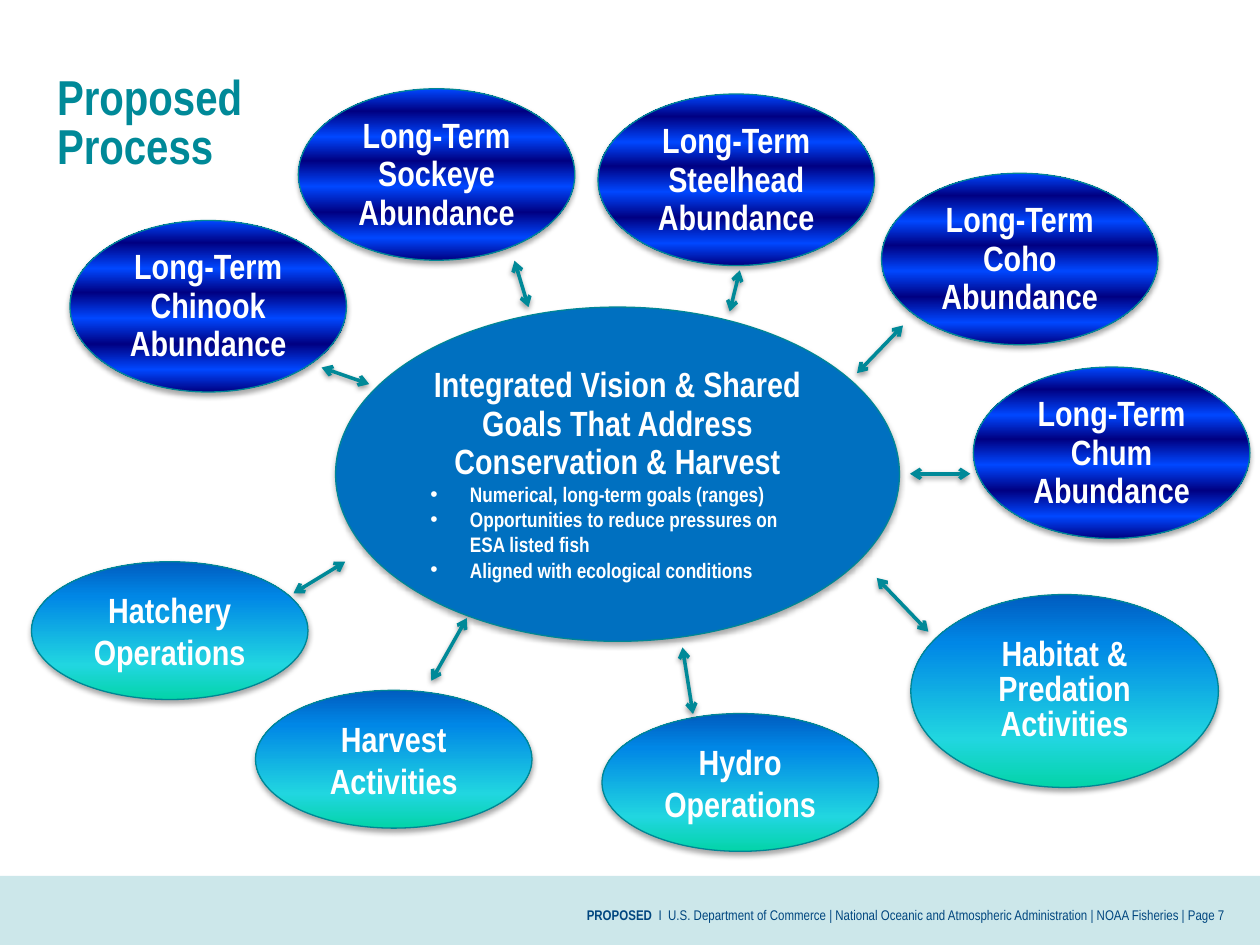
from lxml.etree import SubElement
from pptx import Presentation
from pptx.dml.color import RGBColor
from pptx.enum.shapes import MSO_CONNECTOR, MSO_SHAPE
from pptx.enum.text import MSO_ANCHOR, PP_ALIGN
from pptx.oxml.ns import qn
from pptx.util import Pt

COLORS = {
    "white": "FFFFFF", "band": "CCE7EA", "footer": "00467F", "teal": "008998",
    "outline": "008695", "vision": "0070C0", "shadow": "000000",
    "navy": "000082", "royal": "0047FF",
    "green": "03D4A8", "aqua": "21D6E0", "sky": "0087E6", "deep": "005CBF",
}
STOCK_GRADIENT = list(zip((0, 13, 28, 43, 58, 72, 87, 100), ("navy", "royal") * 4))
ACTIVITY_GRADIENT = [(0, "green"), (25, "aqua"), (75, "sky"), (100, "deep")]

STOCKS = [
    ("Chinook", 40, 126), ("Sockeye", 170.5, 50.75), ("Steelhead", 341.75, 53.75),
    ("Coho", 503.75, 99), ("Chum", 556.25, 209.75),
]
ACTIVITIES = [
    ("Hydro Operations", (344, 407.75, 158, 78.75), None, 7.2, 3.6),
    ("Harvest Activities", (146, 394.5, 158, 78.75), None, 7.2, 3.6),
    ("Hatchery Operations", (18, 321, 158, 78.75), None, 3.6, 3.6),
    ("Habitat & Predation Activities", (520.5, 339.75, 175.75, 110.25), 20, 7.2, 3.6),
]
VISION_POINTS = [
    "Numerical, long-term goals (ranges)",
    "Opportunities to reduce pressures on ESA listed fish",
    "Aligned with ecological conditions",
]
ARROWS = [
    (501, 330.25, 530.5, 361), (390, 370, 396, 408), (266.75, 353.25, 246.5, 389),
    (197.25, 321, 167.75, 339), (294, 149, 302, 175.5), (183.75, 210, 211, 219.5),
    (489.75, 213.25, 516, 186), (422.75, 154.5, 417, 178), (520, 270.75, 554.5, 270.75),
]


def rgb(name):
    return RGBColor.from_string(COLORS[name])


def add_shadow(properties, alpha, blur, distance):
    effects = properties.find(qn("a:effectLst"))
    if effects is None:
        effects = SubElement(properties, qn("a:effectLst"))
    shadow = SubElement(effects, qn("a:outerShdw"), blurRad=str(Pt(blur)),
                        dist=str(Pt(distance)), dir="5400000", rotWithShape="0")
    color = SubElement(shadow, qn("a:srgbClr"), val=COLORS["shadow"])
    SubElement(color, qn("a:alpha"), val=str(alpha * 1000))


def fill_gradient(shape, stops):
    shape.fill.gradient()
    shape.fill.gradient_angle = 90
    stop_list = shape.element.spPr.find(qn("a:gradFill")).find(qn("a:gsLst"))
    for stop in list(stop_list):
        stop_list.remove(stop)
    for position, name in stops:
        stop = SubElement(stop_list, qn("a:gs"), pos=str(position * 1000))
        SubElement(stop, qn("a:srgbClr"), val=COLORS[name])


def write_text(paragraph, text, size=20, color="white", bold=True,
               align=PP_ALIGN.CENTER, spacing=None, bullet=False):
    paragraph.alignment = align
    if spacing:
        paragraph.line_spacing = Pt(spacing)
    if bullet:
        properties = paragraph._p.get_or_add_pPr()
        properties.set("marL", str(Pt(22.5)))
        properties.set("indent", str(-Pt(22.5)))
        SubElement(properties, qn("a:buFont"), typeface="Arial")
        SubElement(properties, qn("a:buChar"), char="•")
    run = paragraph.add_run()
    run.text = text
    run.font.name = "Arial Narrow"
    run.font.size = Pt(size)
    run.font.bold = bold
    run.font.color.rgb = rgb(color)


def add_ellipse(slide, box, fill, side_inset=7.2, top_inset=3.6):
    shape = slide.shapes.add_shape(MSO_SHAPE.OVAL, *map(Pt, box))
    shape.shadow.inherit = False
    if isinstance(fill, str):
        shape.fill.solid()
        shape.fill.fore_color.rgb = rgb(fill)
    else:
        fill_gradient(shape, fill)
    shape.line.color.rgb = rgb("outline")
    shape.line.width = Pt(0.75)
    add_shadow(shape.element.spPr, 35, 3.1, 1.8)
    frame = shape.text_frame
    frame.word_wrap = True
    frame.vertical_anchor = MSO_ANCHOR.MIDDLE
    frame.margin_left = frame.margin_right = Pt(side_inset)
    frame.margin_top = frame.margin_bottom = Pt(top_inset)
    return frame


def add_arrow(slide, points):
    connector = slide.shapes.add_connector(MSO_CONNECTOR.STRAIGHT, *map(Pt, points))
    connector.line.color.rgb = rgb("teal")
    connector.line.width = Pt(2)
    line = connector.line._get_or_add_ln()
    for end in ("a:headEnd", "a:tailEnd"):
        SubElement(line, qn(end), type="arrow")
    add_shadow(connector.element.spPr, 38, 3.1, 1.6)


def add_text_box(slide, box):
    frame = slide.shapes.add_textbox(*map(Pt, box)).text_frame
    frame.word_wrap = True
    return frame


def add_footer(slide):
    band = slide.shapes.add_shape(MSO_SHAPE.RECTANGLE, *map(Pt, (0, 500.5, 720, 39.5)))
    band.shadow.inherit = False
    band.fill.solid()
    band.fill.fore_color.rgb = rgb("band")
    band.line.fill.background()
    paragraph = add_text_box(slide, (246.25, 514.75, 461.5, 49)).paragraphs[0]
    style = {"size": 8, "color": "footer", "align": PP_ALIGN.RIGHT}
    write_text(paragraph, "PROPOSED ", **style)
    write_text(paragraph, " I  U.S. Department of Commerce | National Oceanic and Atmospheric "
               "Administration | NOAA Fisheries | Page 7", bold=False, **style)


def add_title(slide):
    frame = add_text_box(slide, (25.5, 40.25, 580, 64))
    for index, word in enumerate(("Proposed", "Process")):
        paragraph = frame.add_paragraph() if index else frame.paragraphs[0]
        write_text(paragraph, word, size=28, color="teal", align=PP_ALIGN.LEFT, spacing=28)


def add_vision(slide):
    frame = add_ellipse(slide, (191.75, 175.5, 322.25, 191), "vision", top_inset=0)
    write_text(frame.paragraphs[0],
               "Integrated Vision & Shared Goals That Address Conservation & Harvest",
               spacing=22)
    for point in VISION_POINTS:
        write_text(frame.add_paragraph(), point, size=12, align=PP_ALIGN.LEFT, bullet=True)


def main():
    presentation = Presentation()
    presentation.slide_width = Pt(720)
    presentation.slide_height = Pt(540)
    slide = presentation.slides.add_slide(presentation.slide_layouts[6])
    add_footer(slide)
    add_vision(slide)
    for text, box, spacing, side_inset, top_inset in ACTIVITIES:
        frame = add_ellipse(slide, box, ACTIVITY_GRADIENT, side_inset, top_inset)
        write_text(frame.paragraphs[0], text, spacing=spacing)
    add_title(slide)
    for fish, left, top in STOCKS:
        frame = add_ellipse(slide, (left, top, 158, 98), STOCK_GRADIENT)
        write_text(frame.paragraphs[0], f"Long-Term {fish} Abundance", spacing=22)
    for points in ARROWS:
        add_arrow(slide, points)
    presentation.save("out.pptx")


if __name__ == "__main__":
    main()
